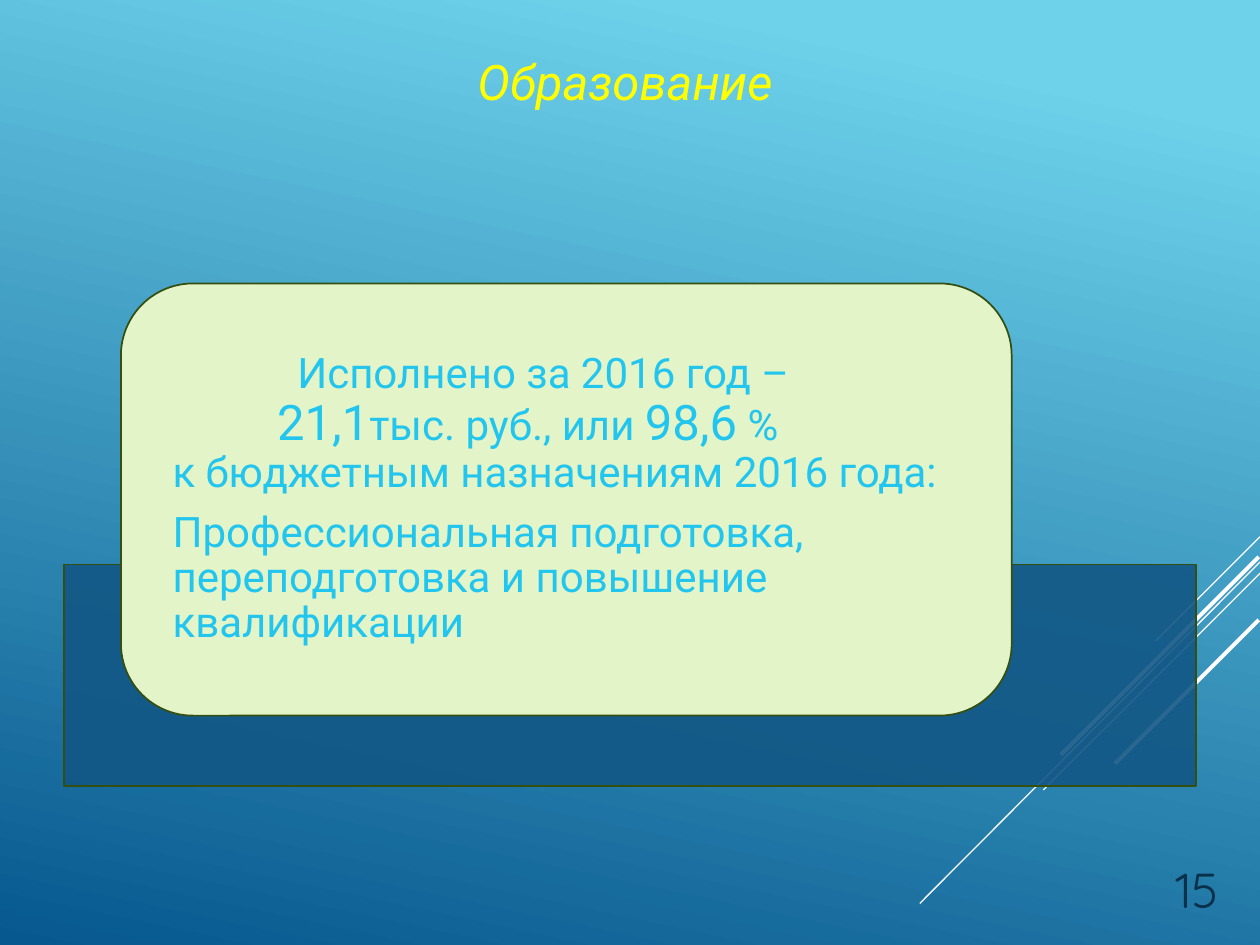
import pptx
import pptx.dml.color
import pptx.enum.shapes
import pptx.enum.text
import pptx.oxml
import pptx.oxml.ns
import pptx.util

Inches = pptx.util.Inches
Pt = pptx.util.Pt
SHAPE = pptx.enum.shapes.MSO_SHAPE
ALIGN = pptx.enum.text.PP_ALIGN
ANCHOR = pptx.enum.text.MSO_ANCHOR
NO_FIT = pptx.enum.text.MSO_AUTO_SIZE.NONE

RAYS = [
    ((10, 4.26), (9.17, 5.09), 0.75),
    ((10, 4.46), (7.3, 7.17), 0.75),
    ((10, 4.55), (8.28, 6.27), 0.75),
    ((9.99, 4.42), (8.42, 5.99), 2.25),
    ((9.99, 4.92), (8.85, 6.06), 2.25),
]
# Each entry: left indent, space after, spans of text and size
REPORT = [
    (0.99, 0, [("Исполнено за 2016 год –", 24)]),
    (0.83, 0, [("21,1", 28), ("тыс. руб., или ", 24), ("98,6", 28), (" %", 24)]),
    (0, 8.4, [("к бюджетным назначениям 2016 года:", 24)]),
    (0, 8.4, [("Профессиональная подготовка, переподготовка и повышение квалификации", 24)]),
]


def color(value):
    """Turn a hex string into a colour."""
    return pptx.dml.color.RGBColor.from_string(value)


def apply(target, values):
    """Set attributes from a dict of format values."""
    for name, value in values.items():
        setattr(target, name, value)


def place(box, left, top, width, height):
    """Set the position and size of a box in inches."""
    apply(box, {"left": Inches(left), "top": Inches(top),
                "width": Inches(width), "height": Inches(height)})


def add_child(parent, tag, **attributes):
    """Append an empty drawing element to an XML parent."""
    child = pptx.oxml.parse_xml(f"<a:{tag} {pptx.oxml.ns.nsdecls('a')}/>")
    for name, value in attributes.items():
        child.set(name, value)
    parent.append(child)


def add_span(para, text, size, font, tint, italic=False):
    """Add formatted text to a paragraph."""
    span = para.add_run()
    span.text = text
    apply(span.font, {"size": Pt(size), "name": font, "italic": italic})
    span.font.color.rgb = color(tint)


def paint_background(page):
    """Fill the page with a gradient from light to dark blue."""
    fill = page.background.fill
    fill.gradient()
    fill.gradient_angle = 258
    for stop, (position, tint) in zip(fill.gradient_stops, [(0.1, "6ED2EB"), (1, "06588E")]):
        stop.position = position
        stop.color.rgb = color(tint)


def add_ray(page, start, end, width):
    """Draw a white diagonal line."""
    ray = page.shapes.add_connector(pptx.enum.shapes.MSO_CONNECTOR.STRAIGHT,
                                    *map(Inches, start + end))
    ray.line.color.rgb = color("FFFFFF")
    ray.line.width = Pt(width)
    add_child(ray._element.spPr, "effectLst")


def add_panel(page, kind, bounds, tint):
    """Draw a filled panel with a dark green outline."""
    panel = page.shapes.add_shape(kind, *map(Inches, bounds))
    panel.shadow.inherit = False
    panel.fill.solid()
    panel.fill.fore_color.rgb = color(tint)
    panel.line.color.rgb = color("354F10")
    panel.line.width = Pt(1)
    return panel


def write_title(title):
    """Place and write the page title."""
    place(title, 0.59, 0.36, 8.74, 0.57)
    apply(title.text_frame, {"auto_size": NO_FIT, "vertical_anchor": ANCHOR.TOP})
    para = title.text_frame.paragraphs[0]
    para.alignment = ALIGN.CENTER
    add_span(para, "Образование", 28, "Roboto", "FFFF00", True)


def write_report(body):
    """Write the report paragraphs in the body placeholder."""
    place(body, 1.13, 2.42, 6.73, 3.09)
    frame = body.text_frame
    apply(frame, {"auto_size": NO_FIT, "word_wrap": True, "vertical_anchor": ANCHOR.MIDDLE,
                  "margin_left": Inches(0.24), "margin_right": Inches(0.24),
                  "margin_top": 0, "margin_bottom": 0})
    for index, (indent, after, spans) in enumerate(REPORT):
        para = frame.add_paragraph() if index else frame.paragraphs[0]
        apply(para, {"line_spacing": 0.9, "space_before": Pt(0), "space_after": Pt(after),
                     "alignment": ALIGN.LEFT})
        properties = para._p.get_or_add_pPr()
        properties.set("marL", str(Inches(indent)))
        properties.set("indent", "0")
        add_child(properties, "buNone")
        for text, size in spans:
            add_span(para, text, size, "Roboto", "22C5ED")


def add_page_number(page):
    """Write the page number at the lower right."""
    box = page.shapes.add_textbox(*map(Inches, (7.64, 7.06, 2.13, 0.28)))
    apply(box.text_frame, {"word_wrap": True, "vertical_anchor": ANCHOR.BOTTOM})
    para = box.text_frame.paragraphs[0]
    para.alignment = ALIGN.RIGHT
    add_span(para, "15", 28, "Quicksand", "0A304A")


def main():
    """Build the deck and save it."""
    deck = pptx.Presentation()
    apply(deck, {"slide_width": Inches(10), "slide_height": Inches(7.5)})
    page = deck.slides.add_slide(deck.slide_layouts[1])
    title, body = page.placeholders
    paint_background(page)
    for ray in RAYS:
        add_ray(page, *ray)
    add_page_number(page)
    write_title(title)
    band = add_panel(page, SHAPE.RECTANGLE, (0.51, 4.48, 8.98, 1.76), "125785")
    band_color = band._element.spPr.find(pptx.oxml.ns.qn("a:solidFill"))[0]
    add_child(band_color, "alpha", val="90000")
    add_panel(page, SHAPE.ROUNDED_RECTANGLE, (0.96, 2.25, 7.07, 3.43), "E3F4C9")
    write_report(body)
    body._element.getparent().append(body._element)
    deck.save("out.pptx")


if __name__ == "__main__":
    main()
